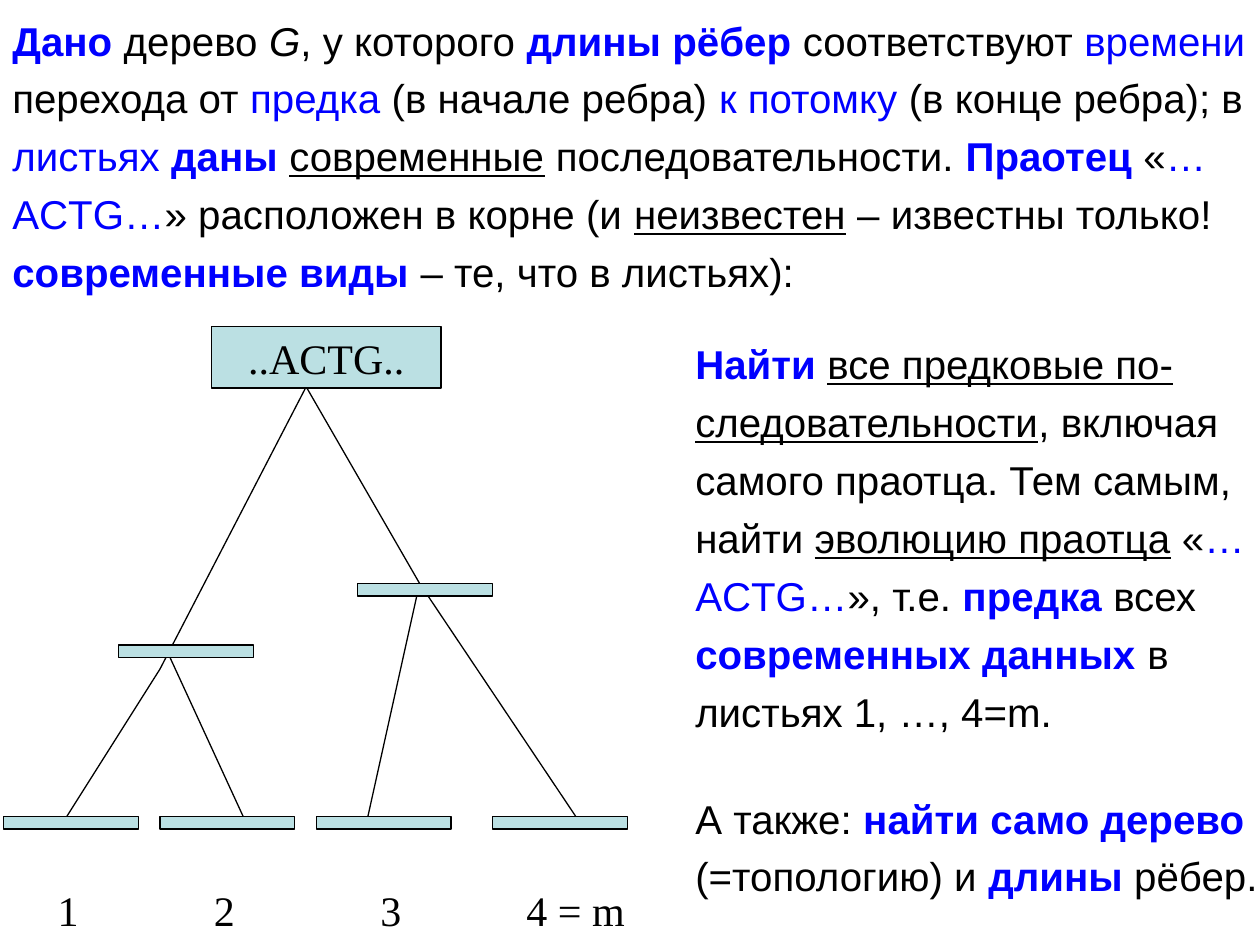
from lxml.etree import SubElement
from pptx import Presentation
from pptx.dml.color import RGBColor
from pptx.enum.shapes import MSO_CONNECTOR, MSO_SHAPE
from pptx.enum.text import MSO_ANCHOR, MSO_AUTO_SIZE, PP_ALIGN
from pptx.oxml.ns import qn
from pptx.util import Inches, Pt

BLACK, BLUE, NODE_FILL = "000000", "0000FF", "BBE0E3"
BODY = {"name": "Arial", "size": Pt(23)}
LABEL = {"name": "Times New Roman", "size": Pt(24)}
STYLES = {
    "plain": (BLACK, {}),
    "italic": (BLACK, {"italic": True}),
    "under": (BLACK, {"underline": True}),
    "blue": (BLUE, {}),
    "key": (BLUE, {"bold": True}),
}

GIVEN = [[
    ("Дано", "key"), (" дерево ", "plain"), ("G", "italic"),
    (", у которого ", "plain"), ("длины рёбер", "key"),
    (" соответствуют ", "plain"), ("времени", "blue"),
    (" перехода от ", "plain"), ("предка ", "blue"),
    ("(в начале ребра) ", "plain"), ("к потомку", "blue"),
    (" (в конце ребра); в ", "plain"), ("листьях ", "blue"),
    ("даны ", "key"), ("современные", "under"),
    (" последовательности. ", "plain"), ("Праотец", "key"),
    (" «", "plain"), ("…ACTG…", "blue"),
    ("» расположен в корне (и ", "plain"), ("неизвестен", "under"),
    (" – известны только! ", "plain"), ("современные виды ", "key"),
    ("– те, что в листьях):", "plain"),
]]
TASK = [
    [
        ("Найти ", "key"), ("все предковые по-следовательности", "under"),
        (", включая самого праотца. Тем самым, найти ", "plain"),
        ("эволюцию праотца", "under"), (" «", "plain"),
        ("…ACTG…", "blue"), ("», т.е. ", "plain"), ("предка ", "key"),
        ("всех ", "plain"), ("современных данных ", "key"), ("в", "plain"),
    ],
    [("листьях 1, …, 4=m.", "plain")],
    [
        ("А также: ", "plain"), ("найти само дерево", "key"),
        (" (=топологию) и ", "plain"), ("длины", "key"), (" рёбер.", "plain"),
    ],
]

ROOT, LEFT, RIGHT = (2.43, 0.48), (1.27, 2.72), (3.33, 2.04)
LEAF_TOP = 3.89
EDGES = [
    (ROOT, LEFT), (ROOT, RIGHT),
    (RIGHT, (4.57, LEAF_TOP)), (RIGHT, (2.92, LEAF_TOP)),
    (LEFT, (0.53, LEAF_TOP)), ((1.35, 2.63), (1.93, LEAF_TOP)),
]
INNER_NODES = [(0.94, 2.53), (2.84, 2.04)]
LEAVES = [
    (0.03, "1", 0.36, 0.37), (1.27, "2", 1.6, 0.37),
    (2.51, "3", 2.92, 0.37), (3.91, "4 = m", 4.08, 0.98),
]


def color(value):
    """Turn a hex string into a colour."""
    return RGBColor.from_string(value)


def apply(target, formats):
    """Set each format value on the target."""
    for key, value in formats.items():
        setattr(target, key, value)


def add_run(paragraph, words, font, style="plain"):
    """Append words in the given font and style."""
    run = paragraph.add_run()
    run.text = words
    ink, emphasis = STYLES[style]
    apply(run.font, {**font, **emphasis})
    run.font.color.rgb = color(ink)


def add_prose(slide, box, paragraphs, gap_before_last=0):
    """Fill the box with styled paragraphs."""
    prose = slide.shapes.add_textbox(*map(Inches, box)).text_frame
    apply(prose, {"word_wrap": True, "auto_size": MSO_AUTO_SIZE.SHAPE_TO_FIT_TEXT})
    for index, runs in enumerate(paragraphs):
        paragraph = prose.add_paragraph() if index else prose.paragraphs[0]
        paragraph.line_spacing = 1.2
        for words, style in runs:
            add_run(paragraph, words, BODY, style)
    if gap_before_last:
        paragraph.space_before = Pt(gap_before_last)


def add_node(tree, x, y, width=1.07, height=0.1):
    """Draw one outlined tree node."""
    node = tree.shapes.add_shape(
        MSO_SHAPE.RECTANGLE, *map(Inches, (x, y, width, height)))
    node.shadow.inherit = False
    node.fill.solid()
    node.fill.fore_color.rgb = color(NODE_FILL)
    node.line.color.rgb = color(BLACK)
    node.line.width = Pt(0.75)
    return node


def add_edge(tree, start, end):
    """Draw one thin edge between two points."""
    edge = tree.shapes.add_connector(
        MSO_CONNECTOR.STRAIGHT, *map(Inches, (*start, *end)))
    edge.line.color.rgb = color(BLACK)
    edge.line.width = Pt(0.75)
    SubElement(edge._element.spPr, qn("a:effectLst"))


def add_tree(slide, box):
    """Draw the evolution tree with its leaf labels in the box."""
    left, top = box[:2]
    tree = slide.shapes.add_group_shape()
    for start, end in EDGES:
        add_edge(tree, *((left + x, top + y) for x, y in (start, end)))

    ancestor = add_node(tree, left + 1.68, top, 1.82, 0.49).text_frame
    apply(ancestor, {"word_wrap": False, "vertical_anchor": MSO_ANCHOR.MIDDLE})
    ancestor.paragraphs[0].alignment = PP_ALIGN.CENTER
    add_run(ancestor.paragraphs[0], "..ACTG..", LABEL)

    for x, y in INNER_NODES:
        add_node(tree, left + x, top + y)
    for x, name, name_x, name_width in LEAVES:
        add_node(tree, left + x, top + LEAF_TOP)
        label = tree.shapes.add_textbox(
            *map(Inches, (left + name_x, top + 4.38, name_width, 0.5))).text_frame
        apply(label, {"word_wrap": False, "auto_size": MSO_AUTO_SIZE.SHAPE_TO_FIT_TEXT})
        add_run(label.paragraphs[0], name, LABEL)


def main():
    """Build and save the slide."""
    deck = Presentation()
    apply(deck, {"slide_width": Inches(10), "slide_height": Inches(7.5)})
    slide = deck.slides.add_slide(deck.slide_layouts[6])
    add_prose(slide, (0, 0, 10, 2.42), GIVEN)
    add_prose(slide, (5.42, 2.57, 4.73, 4.63), TASK, gap_before_last=28)
    add_tree(slide, (0, 2.59, 5.06, 4.88))
    deck.save("out.pptx")


if __name__ == "__main__":
    main()
